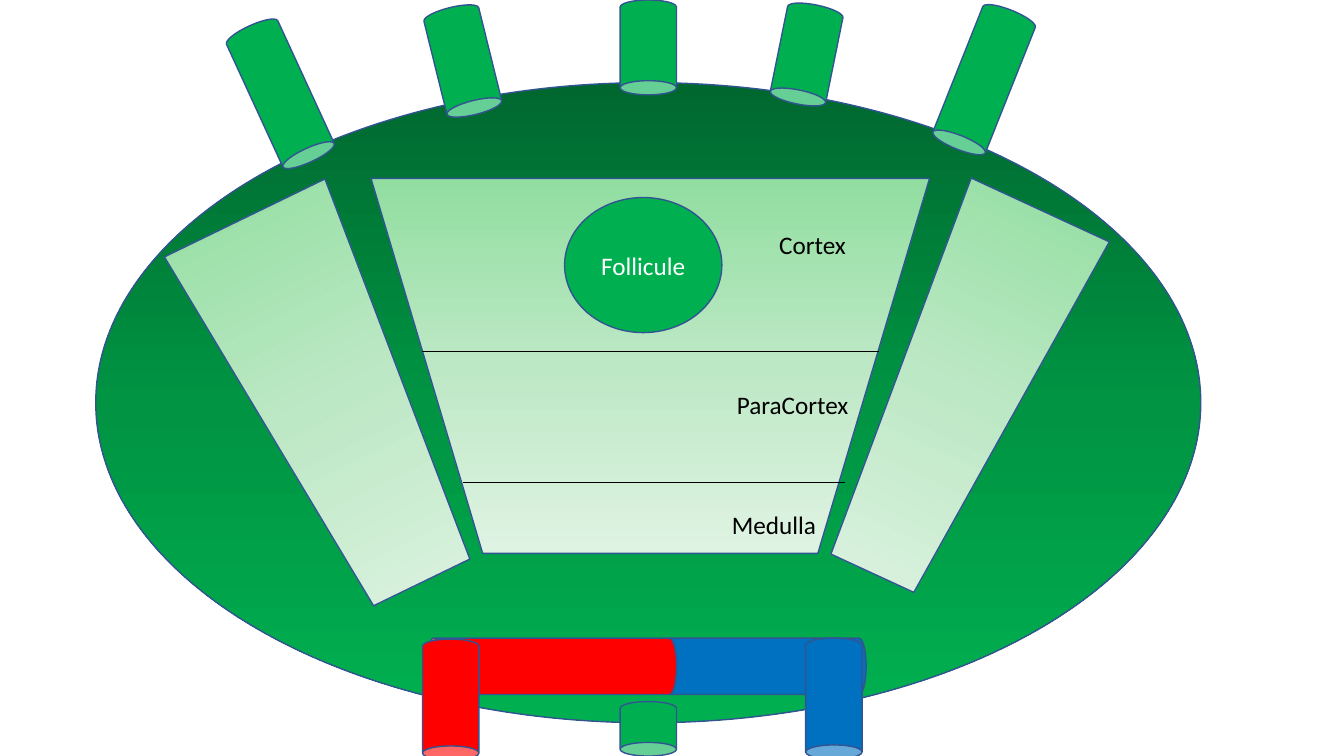
import copy
from dataclasses import dataclass

import lxml.etree
import pptx
import pptx.dml.color
import pptx.enum.shapes
import pptx.enum.text
import pptx.oxml.ns
import pptx.util

Inches = pptx.util.Inches
Preset = pptx.enum.shapes.MSO_SHAPE

COLORS = {
    "outline": "325491",
    "green": "00B050",
    "red": "FF0000",
    "blue": "0070C0",
    "black": "000000",
    "white": "FFFFFF",
    "node_top": "00682F",
    "node_middle": "009443",
    "lobule_top": "91DEA0",
    "lobule_middle": "BDE8C5",
    "lobule_bottom": "DFF3E3",
}
NODE_GRADIENT = ("node_top", "node_middle", "green")
LOBULE_GRADIENT = ("lobule_top", "lobule_middle", "lobule_bottom")
VESSEL_WIDTH = 0.56


@dataclass(frozen=True)
class Vessel:
    left: float
    top: float
    length: float
    rotation: float
    color: str


@dataclass(frozen=True)
class Lobule:
    left: float
    top: float
    width: float
    height: float
    rotation: float


@dataclass(frozen=True)
class Boundary:
    left: float
    right: float
    y: float


@dataclass(frozen=True)
class ZoneLabel:
    left: float
    top: float
    width: float
    text: str


VESSELS = (
    Vessel(6.15, 0, 0.94, 180, "green"),
    Vessel(9.48, 0.05, 1.48, 201.7, "green"),
    Vessel(7.72, 0.04, 1, 191.5, "green"),
    Vessel(4.31, 0.06, 1.09, 166.1, "green"),
    Vessel(7.3, 5.6, 2.02, 270, "blue"),
    Vessel(2.5, 0.19, 1.48, 155.3, "green"),
    Vessel(6.15, 6.96, 0.54, 180, "green"),
    Vessel(5.19, 5.37, 2.48, 270, "red"),
    Vessel(4.19, 6.34, 1.2, 180, "red"),
    Vessel(7.99, 6.33, 1.2, 180, "blue"),
)
LOBULES = (
    Lobule(3.68, 1.77, 5.54, 3.72, 0),
    Lobule(2.42, 1.96, 1.77, 4.02, 334.1),
    Lobule(8.73, 1.9, 1.51, 3.97, 24.8),
)
BOUNDARIES = (Boundary(4.19, 8.72, 3.49), Boundary(4.59, 8.38, 4.79))
ZONE_LABELS = (
    ZoneLabel(7.63, 2.23, 0.96, "Cortex"),
    ZoneLabel(7.21, 3.81, 1.56, "ParaCortex"),
    ZoneLabel(7.16, 5, 1.56, "Medulla"),
)


def rgb(name: str) -> pptx.dml.color.RGBColor:
    return pptx.dml.color.RGBColor.from_string(COLORS[name])


def fill_gradient(shape, color_names: tuple[str, str, str]) -> None:
    """Fill from top to bottom with three evenly spaced colours."""
    shape.fill.gradient()
    shape.fill.gradient_angle = 270
    stop_list = shape.element.spPr.find(".//" + pptx.oxml.ns.qn("a:gsLst"))
    stop_list.insert(1, copy.deepcopy(stop_list[0]))
    for index, (stop, name) in enumerate(zip(shape.fill.gradient_stops, color_names)):
        stop.position = index / 2
        stop.color.rgb = rgb(name)


def add_outlined_shape(slide, preset, left: float, top: float, width: float,
                       height: float, fill: str | tuple[str, str, str],
                       rotation: float = 0):
    shape = slide.shapes.add_shape(
        preset, Inches(left), Inches(top), Inches(width), Inches(height))
    shape.rotation = rotation
    shape.shadow.inherit = False
    shape.line.color.rgb = rgb("outline")
    shape.line.width = pptx.util.Pt(1)
    if isinstance(fill, str):
        shape.fill.solid()
        shape.fill.fore_color.rgb = rgb(fill)
    else:
        fill_gradient(shape, fill)
    return shape


def add_run(paragraph, text: str, color: str) -> None:
    run = paragraph.add_run()
    run.text = text
    run.font.name = "Calibri"
    run.font.size = pptx.util.Pt(18)
    run.font.color.rgb = rgb(color)


def add_boundary(slide, boundary: Boundary) -> None:
    connector = slide.shapes.add_connector(
        pptx.enum.shapes.MSO_CONNECTOR.STRAIGHT,
        Inches(boundary.left), Inches(boundary.y),
        Inches(boundary.right), Inches(boundary.y))
    connector.line.color.rgb = rgb("black")
    connector.line.width = pptx.util.Pt(0.5)
    lxml.etree.SubElement(connector.element.spPr, pptx.oxml.ns.qn("a:effectLst"))


def add_follicle(slide) -> None:
    follicle = add_outlined_shape(
        slide, Preset.OVAL, 5.6, 1.96, 1.56, 1.34, "green")
    frame = follicle.text_frame
    frame.vertical_anchor = pptx.enum.text.MSO_ANCHOR.MIDDLE
    paragraph = frame.paragraphs[0]
    paragraph.alignment = pptx.enum.text.PP_ALIGN.CENTER
    add_run(paragraph, "Follicule", "white")


def add_zone_label(slide, label: ZoneLabel) -> None:
    box = slide.shapes.add_textbox(
        Inches(label.left), Inches(label.top), Inches(label.width), Inches(0.4))
    box.text_frame.word_wrap = True
    box.text_frame.auto_size = pptx.enum.text.MSO_AUTO_SIZE.SHAPE_TO_FIT_TEXT
    add_run(box.text_frame.paragraphs[0], label.text, "black")


def main() -> None:
    presentation = pptx.Presentation()
    presentation.slide_width = Inches(13.33)
    presentation.slide_height = Inches(7.5)
    slide = presentation.slides.add_slide(presentation.slide_layouts[6])

    add_outlined_shape(slide, Preset.OVAL, 0.95, 0.82, 10.96, 6.35, NODE_GRADIENT)
    for vessel in VESSELS:
        add_outlined_shape(slide, Preset.CAN, vessel.left, vessel.top, VESSEL_WIDTH,
                           vessel.length, vessel.color, vessel.rotation)
    for lobule in LOBULES:
        add_outlined_shape(slide, Preset.FLOWCHART_MANUAL_OPERATION, lobule.left,
                           lobule.top, lobule.width, lobule.height,
                           LOBULE_GRADIENT, lobule.rotation)
    for boundary in BOUNDARIES:
        add_boundary(slide, boundary)
    add_follicle(slide)
    for label in ZONE_LABELS:
        add_zone_label(slide, label)

    presentation.save("out.pptx")


if __name__ == "__main__":
    main()
